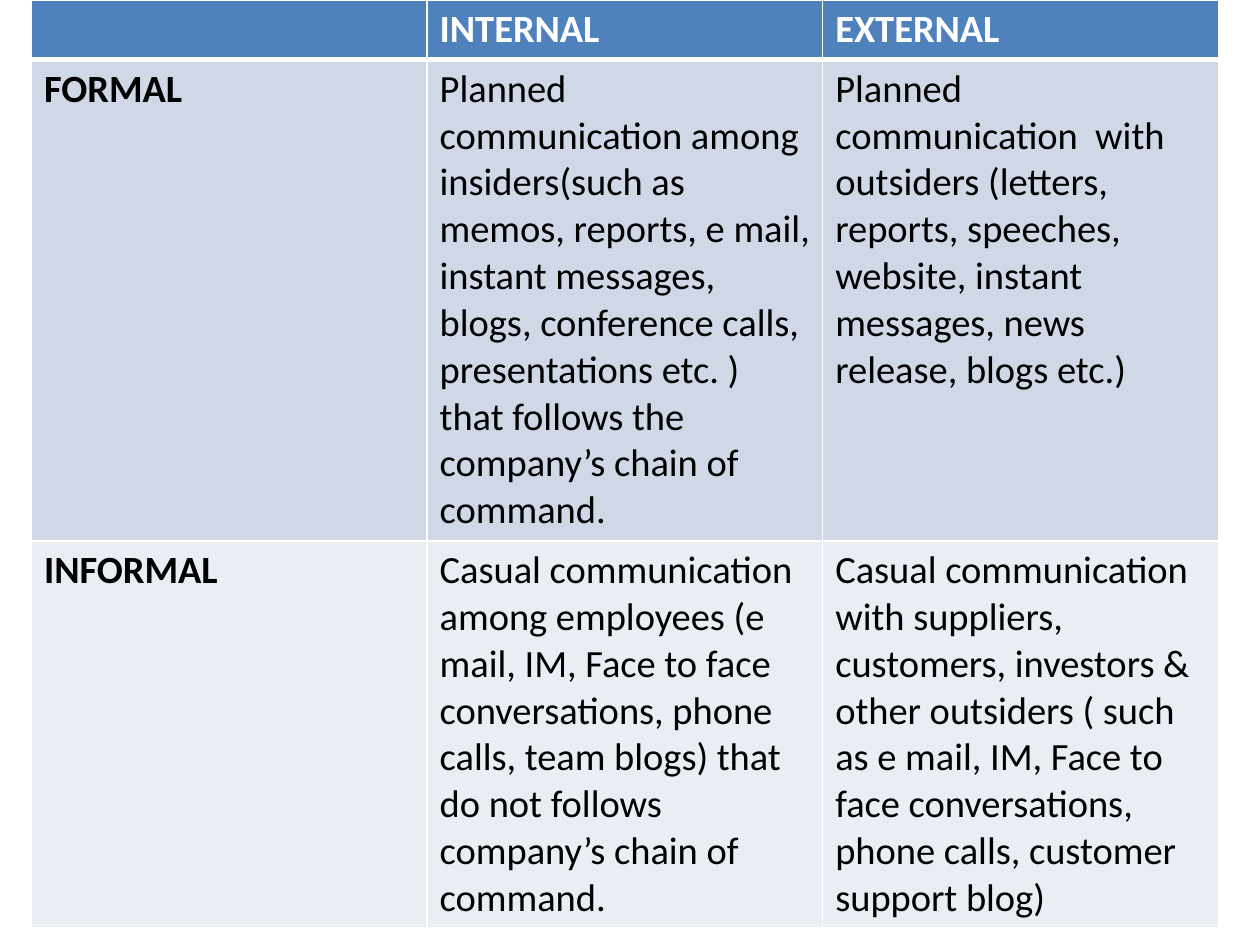
from lxml import etree
from pptx import Presentation
from pptx import util as u
from pptx.dml.color import RGBColor
from pptx.oxml.ns import qn

COLORS = {
    "header": "4F81BD",
    "formal": "D0D8E8",
    "informal": "E9EDF4",
    "border": "FFFFFF",
    "header_text": "FFFFFF",
    "body_text": "000000",
}
FONT = "Calibri"
TEXT_SIZE = 22
COLUMN_WIDTH = 3.14
ROWS = [
    ("header", 0.47, ["", "INTERNAL", "EXTERNAL"]),
    ("formal", 3.82, [
        "FORMAL",
        "Planned communication among insiders(such as  memos, reports, e mail, "
        "instant messages, blogs, conference calls, presentations etc. ) "
        "that follows the company’s chain of command.",
        "Planned communication  with outsiders (letters, reports, speeches, "
        "website, instant messages, news release, blogs etc.)",
    ]),
    ("informal", 3.07, [
        "INFORMAL",
        "Casual communication among employees (e mail, IM, Face to face "
        "conversations, phone calls, team blogs) that do not follows "
        "company’s chain of command.",
        "Casual communication  with suppliers,  customers, investors & other "
        "outsiders ( such as e mail, IM, Face to face conversations, "
        "phone calls, customer support blog)",
    ]),
]


def set_borders(cell, widths):
    properties = cell._tc.get_or_add_tcPr()
    for position, (side, width) in enumerate(widths.items()):
        line = etree.Element(qn(f"a:ln{side}"), w=str(u.Pt(width)))
        fill = etree.SubElement(line, qn("a:solidFill"))
        etree.SubElement(fill, qn("a:srgbClr"), val=COLORS["border"])
        properties.insert(position, line)


def write_text(cell, wording, color, bold):
    paragraph = cell.text_frame.paragraphs[0]
    paragraph.font.size = u.Pt(TEXT_SIZE)
    if not wording:
        return
    run = paragraph.add_run()
    run.text = wording
    run.font.name = FONT
    run.font.size = u.Pt(TEXT_SIZE)
    run.font.bold = bold
    run.font.color.rgb = RGBColor.from_string(COLORS[color])


def fill_cell(cell, kind, wording, is_label, widths):
    cell.fill.solid()
    cell.fill.fore_color.rgb = RGBColor.from_string(COLORS[kind])
    is_header = kind == "header"
    write_text(cell, wording, "header_text" if is_header else "body_text",
               is_header or is_label)
    set_borders(cell, widths)


def add_communication_table(slide):
    column_count = len(ROWS[0][2])
    table = slide.shapes.add_table(
        len(ROWS), column_count, u.Inches(0.25), u.Inches(0),
        u.Inches(COLUMN_WIDTH * column_count),
        u.Inches(sum(height for _, height, _ in ROWS))).table
    for column in table.columns:
        column.width = u.Inches(COLUMN_WIDTH)
    for row_index, (kind, height, wordings) in enumerate(ROWS):
        table.rows[row_index].height = u.Inches(height)
        widths = {"L": 1, "R": 1,
                  "T": 3 if row_index == 1 else 1,
                  "B": 3 if row_index == 0 else 1}
        for column_index, wording in enumerate(wordings):
            fill_cell(table.cell(row_index, column_index), kind, wording,
                      column_index == 0, widths)


def main():
    deck = Presentation()
    deck.slide_width = u.Inches(10)
    deck.slide_height = u.Inches(7.5)
    slide = deck.slides.add_slide(deck.slide_layouts[6])
    add_communication_table(slide)
    deck.save("out.pptx")


if __name__ == "__main__":
    main()
